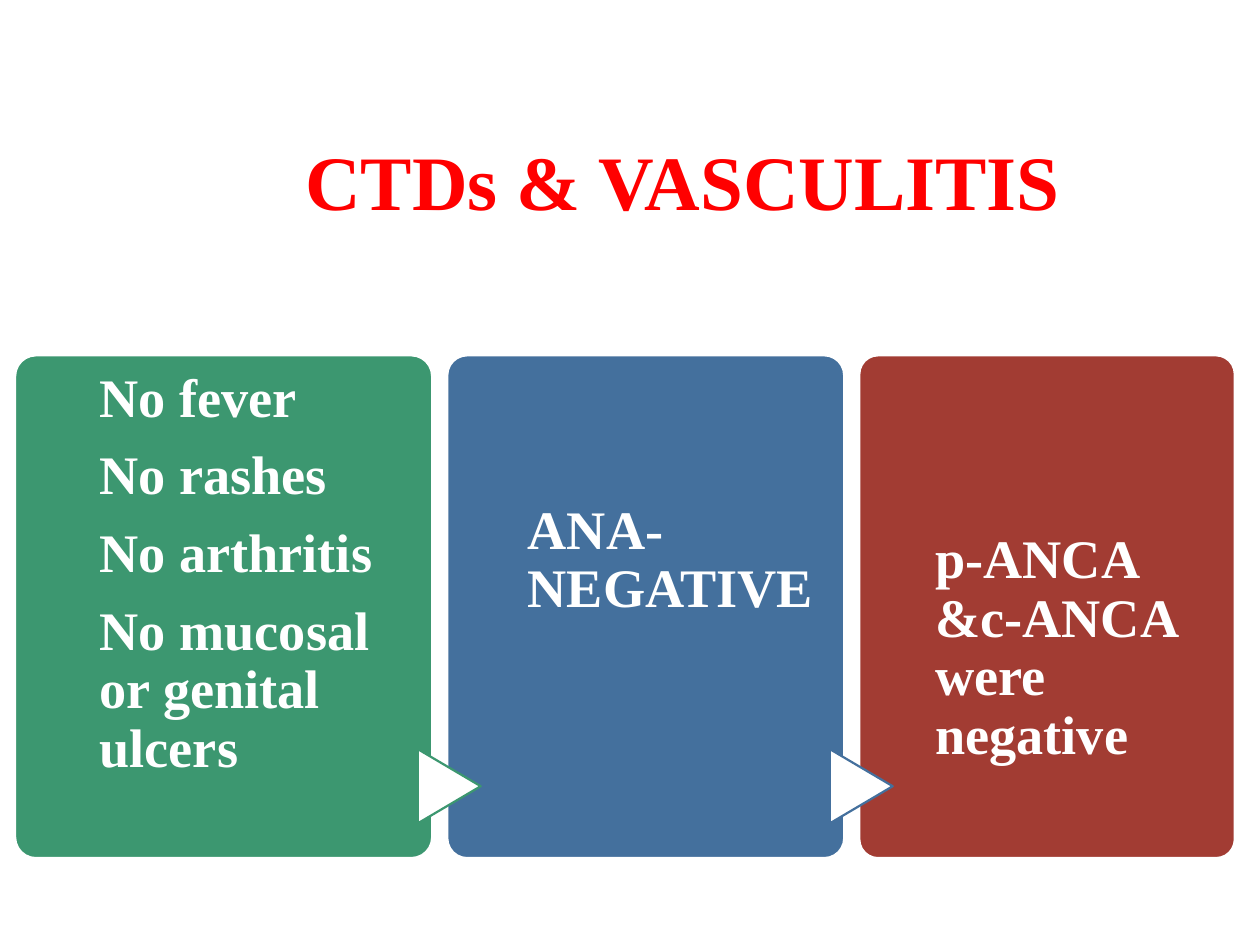
from pptx import Presentation
from pptx.dml.color import RGBColor
from pptx.enum.shapes import MSO_SHAPE as SHAPE
from pptx.enum.text import MSO_ANCHOR as ANCHOR, PP_ALIGN as ALIGN
from pptx.util import Inches, Pt

FONT = "Times New Roman"
WHITE = "FFFFFF"
LEFT, TOP, HEIGHT, GAP = 0.12, 2.82, 3.99, 0.12
TEXT_OFFSET, TEXT_SHARE = 0.203, 0.745  # shares of the card width
ARROW_W, ARROW_H = 0.59, 0.5

# Card width, fill, top inset of the text, paragraphs
CARDS = [
    (3.31, "3C9770", 0.12, ["No fever", "No rashes", "No arthritis",
                            "No mucosal or genital ulcers"]),
    (3.15, "44709D", 1.4, ["ANA- NEGATIVE"]),
    (2.98, "A23C33", 1.4, ["p-ANCA &c-ANCA were negative"]),
]


def color(value):
    return RGBColor.from_string(value)


def set_attrs(target, values):
    for name, value in values.items():
        setattr(target, name, value)


def box(*lengths):
    return [Inches(v) for v in lengths]


def write(p, text, size, rgb):
    r = p.add_run()
    r.text = text
    set_attrs(r.font, {"name": FONT, "size": Pt(size), "bold": True})
    r.font.color.rgb = color(rgb)


def add_title(s, text):
    sp = s.shapes.title
    left, top, width, height = box(1.56, 0.66, 7.72, 1.53)
    set_attrs(sp, {"left": left, "top": top, "width": width, "height": height})
    tf = sp.text_frame
    set_attrs(tf, {"vertical_anchor": ANCHOR.MIDDLE, "word_wrap": True})
    p = tf.paragraphs[0]
    p.alignment = ALIGN.CENTER
    write(p, text, 44, "FF0000")


def add_block(s, kind, place, fill, line):
    sp = s.shapes.add_shape(kind, *box(*place))
    sp.shadow.inherit = False
    sp.fill.solid()
    sp.fill.fore_color.rgb = color(fill)
    sp.line.color.rgb = color(line)
    sp.line.width = Pt(1.25)
    return sp


def add_card_text(s, left, width, inset, lines):
    place = (left + width * TEXT_OFFSET, TOP, width * TEXT_SHARE, HEIGHT)
    tf = s.shapes.add_textbox(*box(*place)).text_frame
    set_attrs(tf, {"word_wrap": True, "vertical_anchor": ANCHOR.TOP,
                   "margin_left": 0, "margin_right": 0, "margin_bottom": 0,
                   "margin_top": Inches(inset)})
    for i, text in enumerate(lines):
        p = tf.add_paragraph() if i else tf.paragraphs[0]
        set_attrs(p, {"line_spacing": 0.9, "space_after": Pt(10.85),
                      "alignment": ALIGN.LEFT})
        write(p, text, 31, WHITE)


def add_arrow(s, next_left, line):
    place = (next_left - 0.28, TOP + HEIGHT - 0.82, ARROW_W, ARROW_H)
    add_block(s, SHAPE.FLOWCHART_EXTRACT, place, WHITE, line).rotation = 90


def main():
    prs = Presentation()
    prs.slide_width, prs.slide_height = box(10, 7.5)
    s = prs.slides.add_slide(prs.slide_layouts[5])
    add_title(s, "CTDs & VASCULITIS")

    # Cards from left to right, each joined to the one before by an arrow
    left, previous = LEFT, None
    for width, fill, inset, lines in CARDS:
        card = add_block(s, SHAPE.ROUNDED_RECTANGLE,
                         (left, TOP, width, HEIGHT), fill, WHITE)
        card.adjustments[0] = 0.05
        if previous:
            add_arrow(s, left, previous)
        add_card_text(s, left, width, inset, lines)
        left, previous = left + width + GAP, fill
    prs.save("out.pptx")


if __name__ == "__main__":
    main()
